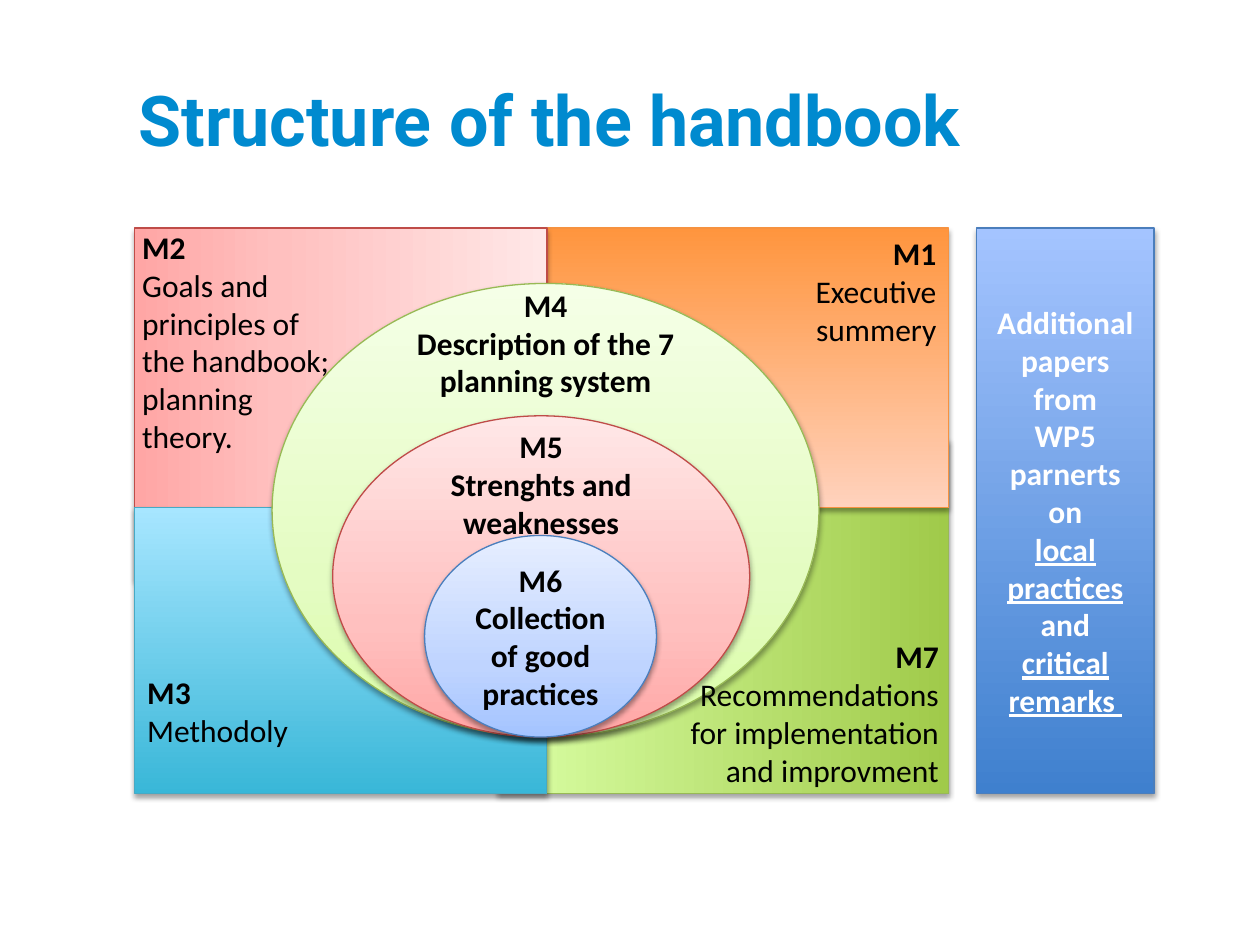
from lxml.etree import SubElement
from pptx import Presentation
from pptx.dml.color import RGBColor
from pptx.enum.shapes import MSO_SHAPE as Shape
from pptx.enum.text import MSO_ANCHOR as Anchor, PP_ALIGN as Align
from pptx.oxml import parse_xml
from pptx.oxml.ns import nsdecls, qn
from pptx.util import Inches, Pt

presentation = Presentation()
presentation.slide_width, presentation.slide_height = Inches(10), Inches(7.5)
slide = presentation.slides.add_slide(presentation.slide_layouts[6])

# Grid: two columns of quadrants, two rows, one sidebar
LEFT, MIDDLE, RIGHT = 1.07, 4.34, 7.53
TOP, CENTRE, BOTTOM = 1.81, 4.03, 6.3
ELLIPSE_BOTTOM = 5.85

PINK = [(0, "FFA6A5"), (35, "FFC0BF"), (100, "FFE7E7")]
GREEN = [(0, "DAFDA7"), (35, "E4FCC2"), (100, "F5FFE7")]
BLUE = [(0, "A4C4FF"), (35, "BFD4FF"), (100, "E6EEFF")]


def add_panel(shapes, kind, box, stops, line, turn=0):
    """Add a gradient shape whose visible bounds, after turning, are box."""
    left, top, width, height = box
    if turn in (90, 270):
        shift = (width - height) / 2
        left, top, width, height = left + shift, top - shift, height, width
    shape = shapes.add_shape(kind, *map(Inches, (left, top, width, height)))
    shape.rotation = turn
    shape.line.color.rgb = RGBColor.from_string(line)
    shape.line.width = Pt(0.75)
    colors = "".join(f'<a:gs pos="{position * 1000}"><a:srgbClr val="{color}"/></a:gs>'
                     for position, color in stops)
    gradient = parse_xml(f'<a:gradFill {nsdecls("a")} rotWithShape="1"><a:gsLst>{colors}</a:gsLst>'
                         '<a:lin ang="16200000" scaled="0"/></a:gradFill>')
    properties = shape._element.spPr
    properties.find(qn("a:prstGeom")).addnext(gradient)
    # Soft shadow straight below
    shadow = SubElement(SubElement(properties, qn("a:effectLst")), qn("a:outerShdw"),
                        blurRad=str(Pt(3.1)), dist=str(Pt(1.8)), dir="5400000", rotWithShape="0")
    SubElement(SubElement(shadow, qn("a:srgbClr"), val="000000"), qn("a:alpha"), val="36000")
    return shape


def write(shape, lines, align, color="000000", size=18, font="Calibri", anchor=Anchor.TOP):
    """Write (text, bold, underline) lines, one paragraph each."""
    frame = shape.text_frame
    frame.word_wrap = True
    frame.vertical_anchor = anchor
    for index, (text, bold, underline) in enumerate(lines):
        paragraph = frame.add_paragraph() if index else frame.paragraphs[0]
        paragraph.alignment = align
        run = paragraph.add_run()
        run.text = text
        run.font.name, run.font.size = font, Pt(size)
        run.font.bold, run.font.underline = bold, underline
        run.font.color.rgb = RGBColor.from_string(color)


# Title
title = slide.shapes.add_textbox(*map(Inches, (0.5, 0.56, 9, 1.25)))
title.text_frame.margin_left = Inches(0.6)
write(title, [("Structure of the handbook", True, False)], Align.LEFT, "008ACF", 40, "Roboto")

# Quadrants: L-shaped corners, each turned to its own side
diagram = slide.shapes.add_group_shape().shapes
quadrants = [
    ((3.95, 3.49, RIGHT - 3.95, BOTTOM - 3.49), [(0, "A0CA4A"), (100, "DAFFA5")], "98B955", 270, None),
    ((MIDDLE, TOP, RIGHT - MIDDLE, CENTRE - TOP), [(0, "FF953E"), (100, "FFD2BD")], "F69240", 180, 0.7),
    ((LEFT, TOP, MIDDLE - LEFT, 2.79), PINK, "BF4C48", 90, None),
    ((LEFT, CENTRE, MIDDLE - LEFT, BOTTOM - CENTRE), [(0, "39B7D8"), (100, "A7E6FF")], "46AAC5", 0, 0.73),
]
for box, stops, line, turn, arm in quadrants:
    corner = add_panel(diagram, Shape.CORNER, box, stops, line, turn)
    if arm:
        corner.adjustments[1] = arm

# Nested ellipses on a common base line; the outer two carry their label at the top
ellipses = [
    (2.16, 4.34, 3.6, GREEN, "98B955", 2.22, "M4", "Description of the 7 planning system"),
    (2.64, 3.31, 2.55, PINK, "BF4C48", 3.34, "M5", "Strenghts and weaknesses"),
    (3.37, 1.84, 1.6, BLUE, "4B7EBC", None, "M6", "Collection of good practices"),
]
for left, width, height, stops, line, label_top, code, text in ellipses:
    box = (left, ELLIPSE_BOTTOM - height, width, height)
    label = add_panel(diagram, Shape.OVAL, box, stops, line)
    if label_top:
        inner = width * 0.71
        label = diagram.add_textbox(*map(Inches, (left + (width - inner) / 2, label_top, inner, 1)))
    write(label, [(code, True, False), (text, True, False)], Align.CENTER,
          anchor=Anchor.TOP if label_top else Anchor.MIDDLE)

# Quadrant labels
labels = [
    ((1.03, 1.76, 1.75, 1.92), Align.LEFT, "M2", ["Goals and principles of the handbook;", "planning theory."]),
    ((LEFT, 5.29, 1.75, 0.71), Align.LEFT, "M3", ["Methodoly"]),
    ((5.78, TOP, 1.75, 1.01), Align.RIGHT, "M1", ["Executive summery"]),
    ((5.22, 5.01, 2.33, 1.31), Align.RIGHT, "M7", ["Recommendations for implementation and improvment"]),
]
for box, align, code, texts in labels:
    label = diagram.add_textbox(*map(Inches, box))
    write(label, [(code, True, False)] + [(text, False, False) for text in texts], align)

# Sidebar
sidebar = add_panel(slide.shapes, Shape.RECTANGLE, (7.75, TOP, 1.41, BOTTOM - TOP),
                    [(0, "3F80CE"), (100, "A4C4FF")], "4B7EBC")
words = ["Additional", "papers", "from", "WP5 parnerts", "on",
         "local", "practices", "and", "critical", "remarks "]
underlined = {"local", "practices", "critical", "remarks "}
write(sidebar, [(word, True, word in underlined) for word in words],
      Align.CENTER, "FFFFFF", anchor=Anchor.MIDDLE)

presentation.save("out.pptx")
